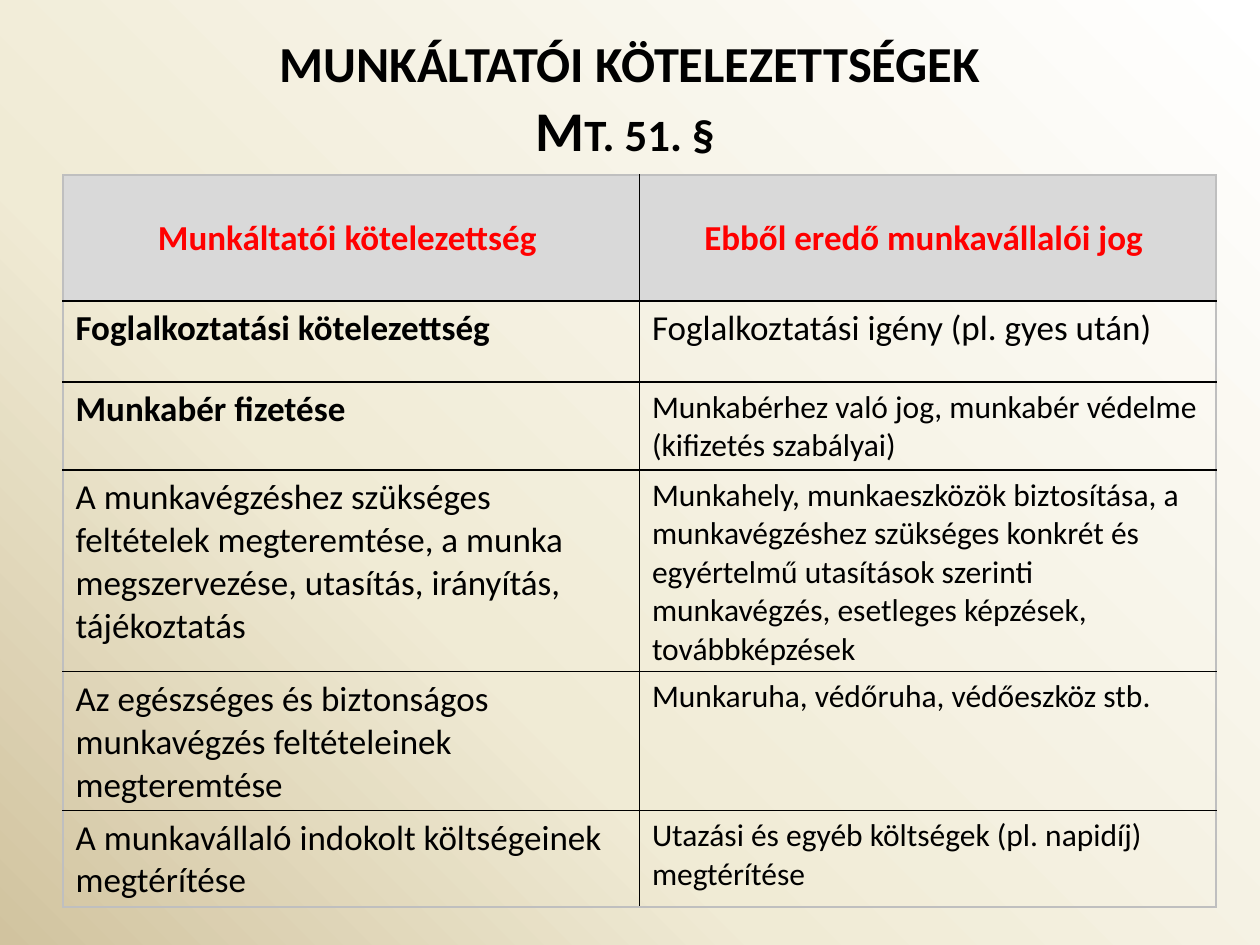
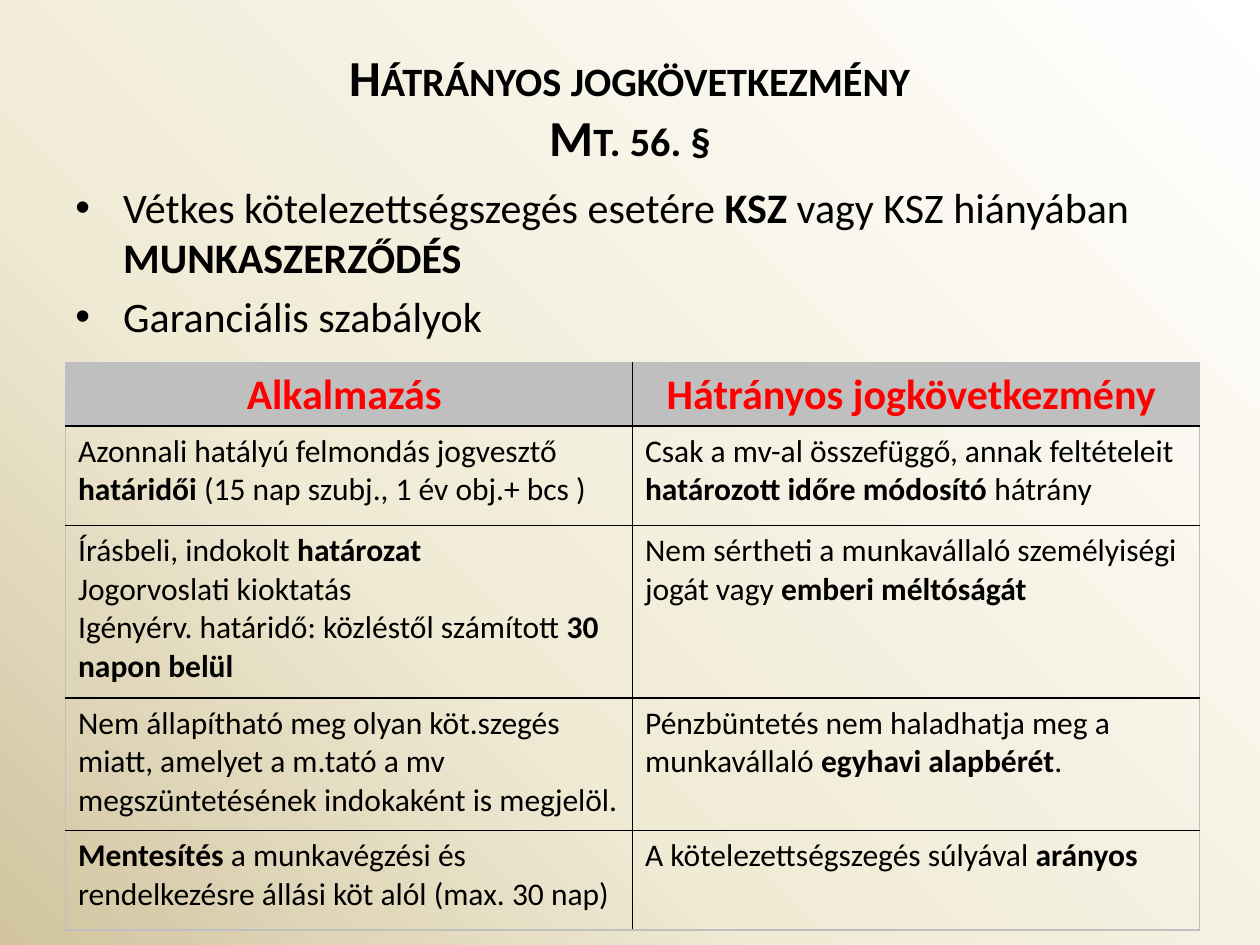
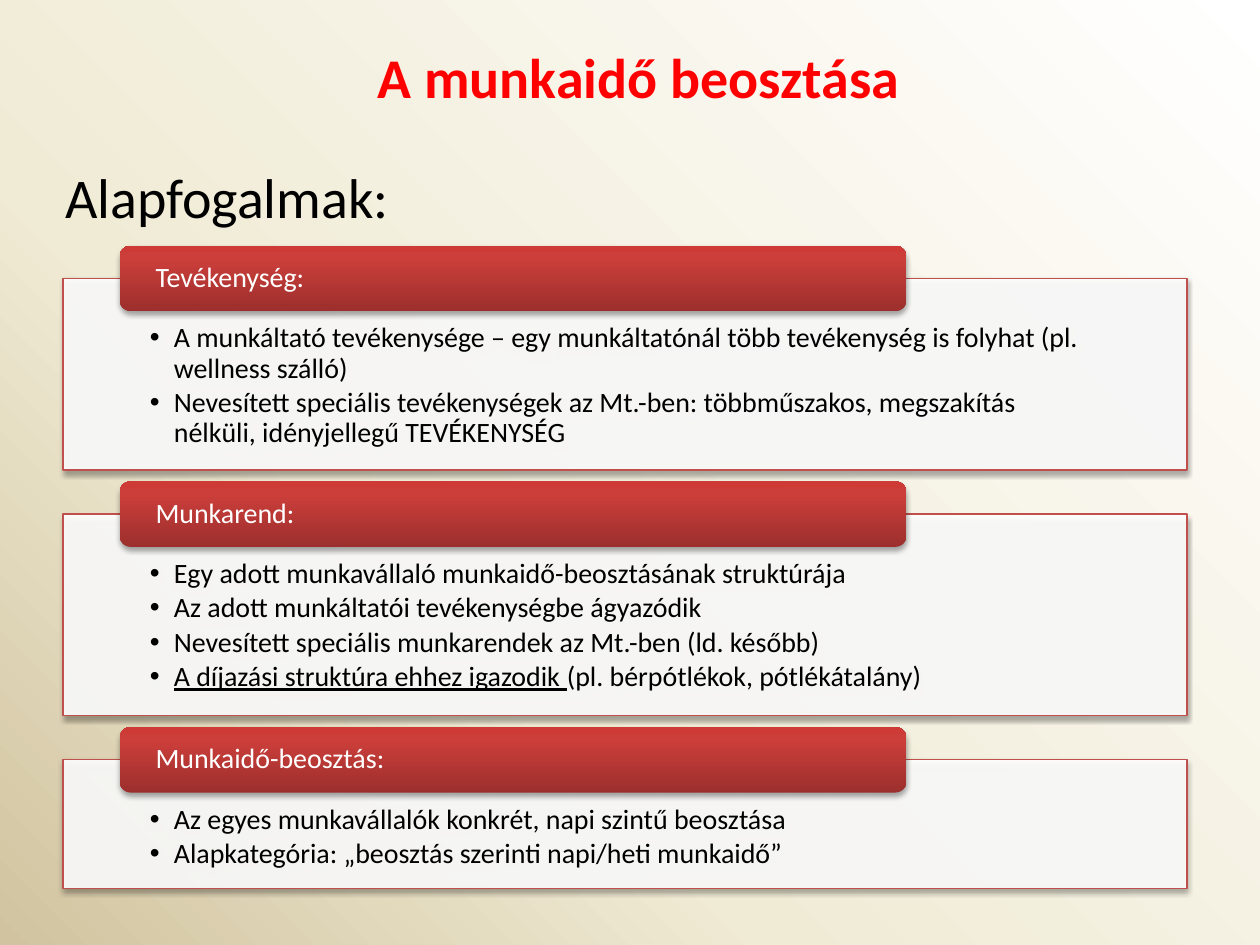
from copy import deepcopy

from pptx import Presentation
from pptx.dml.color import RGBColor
from pptx.enum import shapes, text
from pptx.oxml import parse_xml
from pptx.oxml.ns import nsdecls
from pptx.util import Inches, Pt

BLACK = RGBColor(0, 0, 0)
WHITE = RGBColor(0xFF, 0xFF, 0xFF)
RED = RGBColor(0xFF, 0, 0)
SILVER = RGBColor(0xD9, 0xD9, 0xD9)
GREY = RGBColor(0xBF, 0xBF, 0xBF)
BRICK = RGBColor(0xC0, 0x50, 0x4D)
PAGE_STOPS = [(0, WHITE), (0.65, RGBColor(0xF0, 0xEB, 0xD5)),
              (1, RGBColor(0xD1, 0xC3, 0x9F))]
TAB_STOPS = [(0, RGBColor(0x9C, 0x2F, 0x2D)), (0.8, RGBColor(0xCB, 0x3E, 0x3A)),
             (1, RGBColor(0xCE, 0x3B, 0x37))]
FONT = "Calibri"
CENTER = text.PP_ALIGN.CENTER
LEFT = text.PP_ALIGN.LEFT
MIDDLE = text.MSO_ANCHOR.MIDDLE
TOP = text.MSO_ANCHOR.TOP

DUTIES = [
    ("Munkáltatói kötelezettség ", "Ebből eredő munkavállalói jog "),
    ("*Foglalkoztatási kötelezettség*", "Foglalkoztatási igény (pl. gyes után)"),
    ("*Munkabér fizetése*",
     "Munkabérhez való jog, munkabér védelme (kifizetés szabályai)"),
    ("A munkavégzéshez szükséges feltételek megteremtése, a munka "
     "megszervezése, utasítás, irányítás, tájékoztatás",
     "Munkahely, munkaeszközök biztosítása, a munkavégzéshez szükséges konkrét "
     "és egyértelmű utasítások szerinti munkavégzés, esetleges képzések, "
     "továbbképzések"),
    ("Az egészséges és biztonságos munkavégzés feltételeinek megteremtése",
     "Munkaruha, védőruha, védőeszköz stb."),
    ("A munkavállaló indokolt költségeinek megtérítése",
     "Utazási és egyéb költségek (pl. napidíj) megtérítése"),
]
SANCTIONS = [
    ("Alkalmazás ", "Hátrányos jogkövetkezmény "),
    ("Azonnali hatályú felmondás jogvesztő *határidői* "
     "(15 nap szubj., 1 év obj.+ bcs )",
     "Csak a mv-al összefüggő, annak feltételeit *határozott időre módosító *hátrány"),
    ("Írásbeli, indokolt *határozat*\nJogorvoslati kioktatás\n"
     "Igényérv. határidő: közléstől számított* 30 napon belül*",
     "Nem sértheti a munkavállaló személyiségi jogát vagy *emberi méltóságát*"),
    ("Nem állapítható meg olyan köt.szegés miatt, amelyet a m.tató a mv "
     "megszüntetésének indokaként is megjelöl.",
     "Pénzbüntetés nem haladhatja meg a munkavállaló *egyhavi alapbérét*."),
    ("*Mentesítés* a munkavégzési és rendelkezésre állási köt alól (max. 30 nap)",
     "A kötelezettségszegés súlyával *arányos*"),
]
CONCEPTS = [
    ("Tevékenység:", 1.52, [
        "A munkáltató tevékenysége – egy munkáltatónál több tevékenység is "
        "folyhat (pl. wellness szálló)",
        "Nevesített speciális tevékenységek az Mt.-ben: többműszakos, "
        "megszakítás nélküli, idényjellegű TEVÉKENYSÉG"]),
    ("Munkarend:", 1.6, [
        "Egy adott munkavállaló munkaidő-beosztásának struktúrája",
        "Az adott munkáltatói tevékenységbe ágyazódik",
        "Nevesített speciális munkarendek az Mt.-ben (ld. később)",
        "*A díjazási struktúra ehhez igazodik *(pl. bérpótlékok, pótlékátalány)"]),
    ("Munkaidő-beosztás:", 1.02, [
        "Az egyes munkavállalók konkrét, napi szintű beosztása",
        "Alapkategória: „beosztás szerinti napi/heti munkaidő”"]),
]


def set_values(target, values):
    for name, value in values.items():
        setattr(target, name, value)


def write(para, content, size, color=BLACK, bold=False, emphasis="bold",
          small_caps=False):
    """Add the text to a paragraph; parts between asterisks are emphasised."""
    for number, part in enumerate(content.split("*")):
        if not part:
            continue
        span = para.add_run()
        span.text = part
        set_values(span.font, {"name": FONT, "size": Pt(size), "bold": bold})
        span.font.color.rgb = color
        if number % 2:
            setattr(span.font, emphasis, True)
        if small_caps:
            span.font._element.set("cap", "small")


def write_list(frame, items, size, indent, spacing, emphasis="bold"):
    for number, item in enumerate(items):
        para = frame.paragraphs[0] if number == 0 else frame.add_paragraph()
        set_values(para, {"alignment": LEFT, **spacing})
        write(para, item, size, emphasis=emphasis)
        props = para._p.get_or_add_pPr()
        props.set("marL", str(Inches(indent)))
        props.set("indent", str(-Inches(indent)))
        props.append(parse_xml(f'<a:buFont {nsdecls("a")} typeface="Arial"/>'))
        props.append(parse_xml(f'<a:buChar {nsdecls("a")} char="•"/>'))


def paint_gradient(fill, owner, stops, angle):
    fill.gradient()
    fill.gradient_angle = angle
    stop_list = owner.xpath(".//a:gsLst")[0]
    while len(stop_list) < len(stops):
        stop_list.append(deepcopy(stop_list[0]))
    for stop, (position, color) in zip(fill.gradient_stops, stops):
        stop.position = position
        stop.color.rgb = color


def add_page(deck):
    page = deck.slides.add_slide(deck.slide_layouts[6])
    paint_gradient(page.background.fill, page.element, PAGE_STOPS, 225)
    return page


def add_text_box(page, area, anchor=TOP):
    box = page.shapes.add_textbox(*map(Inches, area))
    set_values(box.text_frame, {"word_wrap": True, "vertical_anchor": anchor})
    return box.text_frame


def add_title(page, area, lines, align=CENTER, anchor=MIDDLE, **style):
    para = add_text_box(page, area, anchor).paragraphs[0]
    para.alignment = align
    for number, (line, size) in enumerate(lines):
        if number:
            para.add_line_break()
        write(para, line, size, **style)


def set_borders(cell, edges):
    """Draw the four sides of a cell, given as side and colour."""
    props = cell._tc.get_or_add_tcPr()
    for position, (side, color) in enumerate(edges.items()):
        props.insert(position, parse_xml(
            f'<a:ln{side} {nsdecls("a")} w="{Pt(1)}"><a:solidFill>'
            f'<a:srgbClr val="{color}"/></a:solidFill></a:ln{side}>'))


def add_grid(page, area, rows, heights, head_fill, head_size, body_size):
    """Two equal columns; body_size gives the text size at a row and column."""
    frame = page.shapes.add_table(len(rows), 2, *map(Inches, area))
    table = frame.table
    set_values(table, {"first_row": False, "horz_banding": False})
    for column in table.columns:
        column.width = Inches(area[2] / 2)
    for r, (row, height) in enumerate(zip(rows, heights)):
        table.rows[r].height = Inches(height)
        for c, content in enumerate(row):
            cell = table.cell(r, c)
            if r == 0:
                cell.fill.solid()
                cell.fill.fore_color.rgb = head_fill
                cell.vertical_anchor = MIDDLE
                style = {"size": head_size, "color": RED, "bold": True}
            else:
                cell.fill.background()
                style = {"size": body_size(r, c)}
            for number, line in enumerate(content.split("\n")):
                para = (cell.text_frame.add_paragraph() if number
                        else cell.text_frame.paragraphs[0])
                para.alignment = LEFT if r else CENTER
                write(para, line, **style)
            set_borders(cell, {"L": BLACK if c else GREY,
                               "R": GREY if c else BLACK,
                               "T": BLACK if r else GREY,
                               "B": GREY if r == len(rows) - 1 else BLACK})


def add_panel(page, kind, area, insets, anchor):
    """A shape with a soft shadow below it."""
    panel = page.shapes.add_shape(kind, *map(Inches, area))
    panel.shadow.inherit = False
    panel.element.xpath("./p:spPr/a:effectLst")[0].append(parse_xml(
        f'<a:outerShdw {nsdecls("a")} blurRad="{Pt(3.1)}" dist="{Pt(1.8)}" '
        'dir="5400000" rotWithShape="0"><a:srgbClr val="000000">'
        '<a:alpha val="35000"/></a:srgbClr></a:outerShdw>'))
    sides = ("margin_left", "margin_top", "margin_right", "margin_bottom")
    set_values(panel.text_frame, dict(zip(sides, map(Inches, insets))))
    set_values(panel.text_frame, {"word_wrap": True, "vertical_anchor": anchor})
    return panel


def add_concept(page, left, top, width, height, name, items):
    """A card of the given height with a name tab over its upper edge."""
    card = add_panel(page, shapes.MSO_SHAPE.RECTANGLE,
                     (left, top + 0.26, width, height),
                     (0.69, 0.36, 0.69, 0.12), TOP)
    card.fill.solid()
    card.fill.fore_color.rgb = WHITE
    card.element.xpath("./p:spPr/a:solidFill/a:srgbClr")[0].append(
        parse_xml(f'<a:alpha {nsdecls("a")} val="90000"/>'))
    card.line.color.rgb = BRICK
    card.line.width = Pt(0.75)
    write_list(card.text_frame, items, 16, 0.19,
               {"line_spacing": 0.9, "space_after": Pt(2.4)}, "underline")

    tab = add_panel(page, shapes.MSO_SHAPE.ROUNDED_RECTANGLE,
                    (left + 0.45, top, width * 0.7, 0.52),
                    (0.26, 0, 0.26, 0), MIDDLE)
    paint_gradient(tab.fill, tab.element, TAB_STOPS, 90)
    tab.line.fill.background()
    para = tab.text_frame.paragraphs[0]
    set_values(para, {"alignment": LEFT, "line_spacing": 0.9})
    write(para, name, 16, WHITE)


def build_duties(deck):
    page = add_page(deck)
    add_title(page, (0.5, 0.3, 9, 0.85),
              [("munkáltatói kötelezettségek", 36), ("Mt. 51. § ", 32)],
              bold=True, small_caps=True)
    add_grid(page, (0.5, 1.39, 9.15, 5.35), DUTIES,
             [1, 0.64, 0.56, 1.43, 1.04, 0.68], SILVER, 20,
             lambda r, c: 18 if c == 1 and r > 1 else 20)


def build_sanctions(deck):
    page = add_page(deck)
    add_title(page, (0.5, 0.3, 9, 1.09),
              [("Hátrányos jogkövetkezmény", 28.8), ("Mt. 56. §", 28.8)],
              bold=True, small_caps=True)
    write_list(add_text_box(page, (0.5, 1.39, 9, 5.31)),
               ["Vétkes kötelezettségszegés esetére *KSZ *vagy KSZ hiányában "
                "*MUNKASZERZŐDÉS*", "Garanciális szabályok"],
               24, 0.38, {"space_before": Pt(4.8)})
    add_grid(page, (0.52, 2.88, 9, 4.5), SANCTIONS,
             [0.5, 0.79, 1.37, 1.05, 0.79], GREY, 24, lambda r, c: 18)


def build_concepts(deck):
    page = add_page(deck)
    top = 1.95
    for name, height, items in CONCEPTS:
        add_concept(page, 0.5, top, 8.92, height, name, items)
        top += 0.26 + height + 0.09
    add_title(page, (0.12, 0.29, 10, 0.64), [("A munkaidő beosztása ", 32)],
              anchor=TOP, color=RED, bold=True)
    add_title(page, (0.42, 0.93, 9, 1.25), [("Alapfogalmak:", 32)], align=LEFT)


def main():
    deck = Presentation()
    set_values(deck, {"slide_width": Inches(10), "slide_height": Inches(7.5)})
    for build in (build_duties, build_sanctions, build_concepts):
        build(deck)
    deck.save("out.pptx")


if __name__ == "__main__":
    main()
